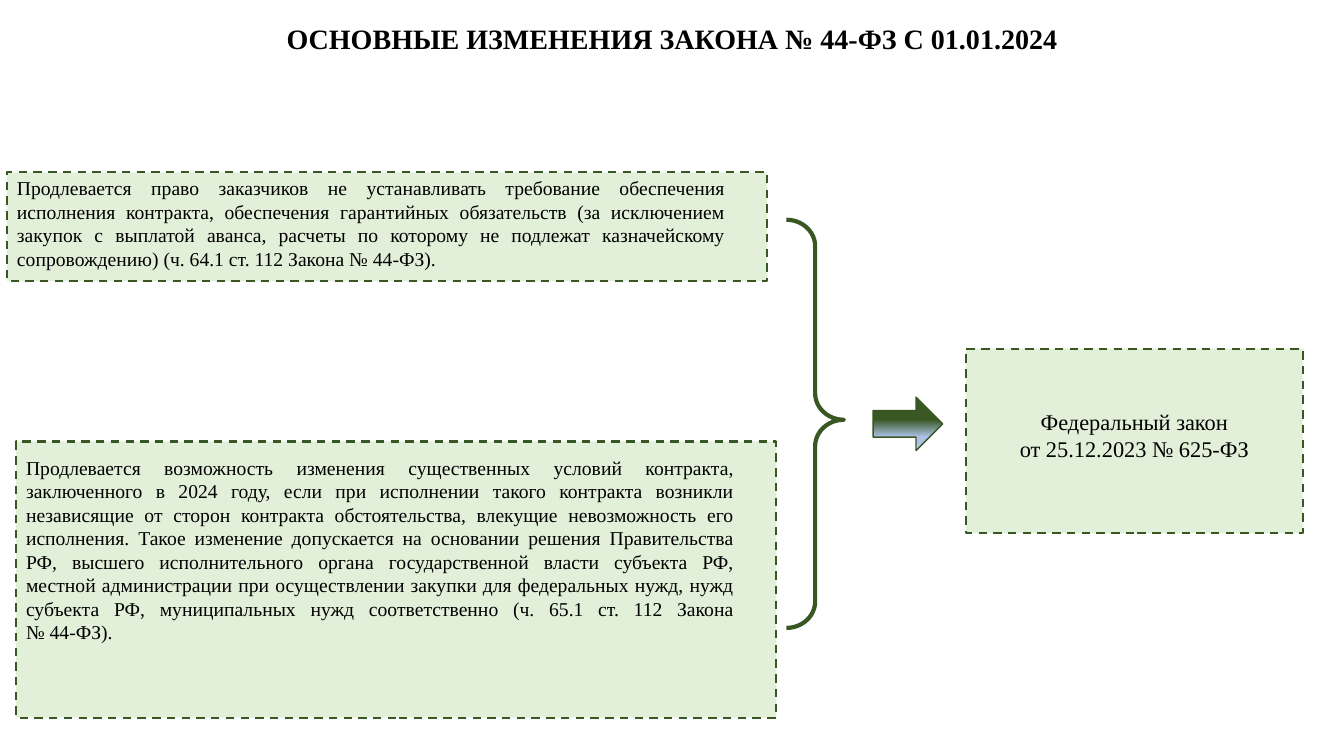
from copy import deepcopy
from dataclasses import dataclass

from pptx import Presentation
from pptx.dml.color import RGBColor
from pptx.enum.dml import MSO_LINE
from pptx.enum.shapes import MSO_SHAPE
from pptx.enum.text import MSO_AUTO_SIZE, PP_ALIGN
from pptx.oxml.ns import qn
from pptx.shapes.autoshape import Shape
from pptx.slide import Slide
from pptx.util import Inches, Pt

FONT = "Times New Roman"
BLACK = "000000"
DARK_GREEN = "385723"
PALE_GREEN = "E2F0D9"
ARROW_STOPS = [(0.42, DARK_GREEN), (0.74, "ABC0E4"), (0.83, "ABC0E4"), (1.0, "C7D5ED")]


@dataclass(frozen=True)
class Area:
    left: float
    top: float
    width: float
    height: float

    def lengths(self) -> list[Inches]:
        return [Inches(v) for v in (self.left, self.top, self.width, self.height)]


@dataclass(frozen=True)
class Label:
    area: Area
    lines: tuple[str, ...]
    size: int
    align: PP_ALIGN = PP_ALIGN.CENTER
    bold: bool = False
    spacing: float = 1.0
    grows: bool = True


@dataclass(frozen=True)
class Card:
    frame: Area
    label: Label


TITLE = Label(
    Area(0.34, 0.2, 12.65, 0.43),
    ("ОСНОВНЫЕ ИЗМЕНЕНИЯ ЗАКОНА № 44-ФЗ С 01.01.2024",),
    size=20, bold=True, spacing=0.9, grows=False,
)

# A vertical tab in a line of text becomes a line break.
CHANGES = [
    Card(
        Area(0.07, 1.71, 7.54, 1.08),
        Label(
            Area(0.07, 1.7, 7.22, 1.04),
            ("Продлевается право заказчиков не устанавливать требование обеспечения "
             "исполнения контракта, обеспечения гарантийных обязательств (за исключением "
             "закупок с выплатой аванса, расчеты по которому не подлежат казначейскому "
             "сопровождению) (ч. 64.1 ст. 112 Закона № 44-ФЗ).",),
            size=14, align=PP_ALIGN.JUSTIFY,
        ),
    ),
    Card(
        Area(0.16, 4.38, 7.54, 2.74),
        Label(
            Area(0.16, 4.47, 7.22, 1.99),
            ("Продлевается возможность изменения существенных условий контракта, "
             "заключенного в 2024 году, если при исполнении такого контракта возникли "
             "независящие от сторон контракта обстоятельства, влекущие невозможность его "
             "исполнения. Такое изменение допускается на основании решения Правительства "
             "РФ, высшего исполнительного органа государственной власти субъекта РФ, "
             "местной администрации при осуществлении закупки для федеральных нужд, нужд "
             "субъекта РФ, муниципальных нужд соответственно (ч. 65.1 ст. 112 Закона\v"
             "№ 44-ФЗ).",),
            size=14, align=PP_ALIGN.JUSTIFY,
        ),
    ),
]

LAW = Card(
    Area(9.58, 3.46, 3.34, 1.83),
    Label(
        Area(9.79, 4.0, 2.92, 0.64),
        ("Федеральный закон", "от 25.12.2023 № 625-ФЗ"),
        size=16,
    ),
)


def color(value: str) -> RGBColor:
    return RGBColor.from_string(value)


def add_outlined(page: Slide, kind: MSO_SHAPE, area: Area, line_width: float) -> Shape:
    """Add an unfilled preset shape with a dark green outline."""
    shape = page.shapes.add_shape(kind, *area.lengths())
    shape.shadow.inherit = False
    shape.fill.background()
    shape.line.color.rgb = color(DARK_GREEN)
    shape.line.width = Pt(line_width)
    return shape


def add_label(page: Slide, label: Label) -> None:
    frame = page.shapes.add_textbox(*label.area.lengths()).text_frame
    frame.word_wrap = True
    if label.grows:
        frame.auto_size = MSO_AUTO_SIZE.SHAPE_TO_FIT_TEXT
    frame.text = "\n".join(label.lines)
    for para in frame.paragraphs:
        para.alignment = label.align
        para.line_spacing = label.spacing
        para.font.name = FONT
        para.font.size = Pt(label.size)
        para.font.bold = label.bold
        para.font.color.rgb = color(BLACK)


def add_card(page: Slide, card: Card) -> None:
    box = add_outlined(page, MSO_SHAPE.RECTANGLE, card.frame, 1.5)
    box.fill.solid()
    box.fill.fore_color.rgb = color(PALE_GREEN)
    box.line.dash_style = MSO_LINE.DASH
    add_label(page, card.label)


def add_brace(page: Slide, area: Area) -> None:
    brace = add_outlined(page, MSO_SHAPE.RIGHT_BRACE, area, 3)
    brace.adjustments[0] = 0.46
    brace.adjustments[1] = 0.49


def add_arrow(page: Slide, area: Area) -> None:
    arrow = add_outlined(page, MSO_SHAPE.RIGHT_ARROW, area, 1)
    arrow.fill.gradient()
    arrow.fill.gradient_angle = 270
    stop_list = arrow.element.spPr.find(qn("a:gradFill")).find(qn("a:gsLst"))
    while len(stop_list) < len(ARROW_STOPS):
        stop_list.append(deepcopy(stop_list[0]))
    for stop, (position, value) in zip(arrow.fill.gradient_stops, ARROW_STOPS):
        stop.position = position
        stop.color.rgb = color(value)


def main() -> None:
    deck = Presentation()
    deck.slide_width = Inches(13.33)
    deck.slide_height = Inches(7.5)
    page = deck.slides.add_slide(deck.slide_layouts[6])

    add_label(page, TITLE)
    for change in CHANGES:
        add_card(page, change)
    add_brace(page, Area(7.8, 2.18, 0.57, 4.05))
    add_arrow(page, Area(8.66, 3.94, 0.69, 0.53))
    add_card(page, LAW)

    deck.save("out.pptx")


if __name__ == "__main__":
    main()
